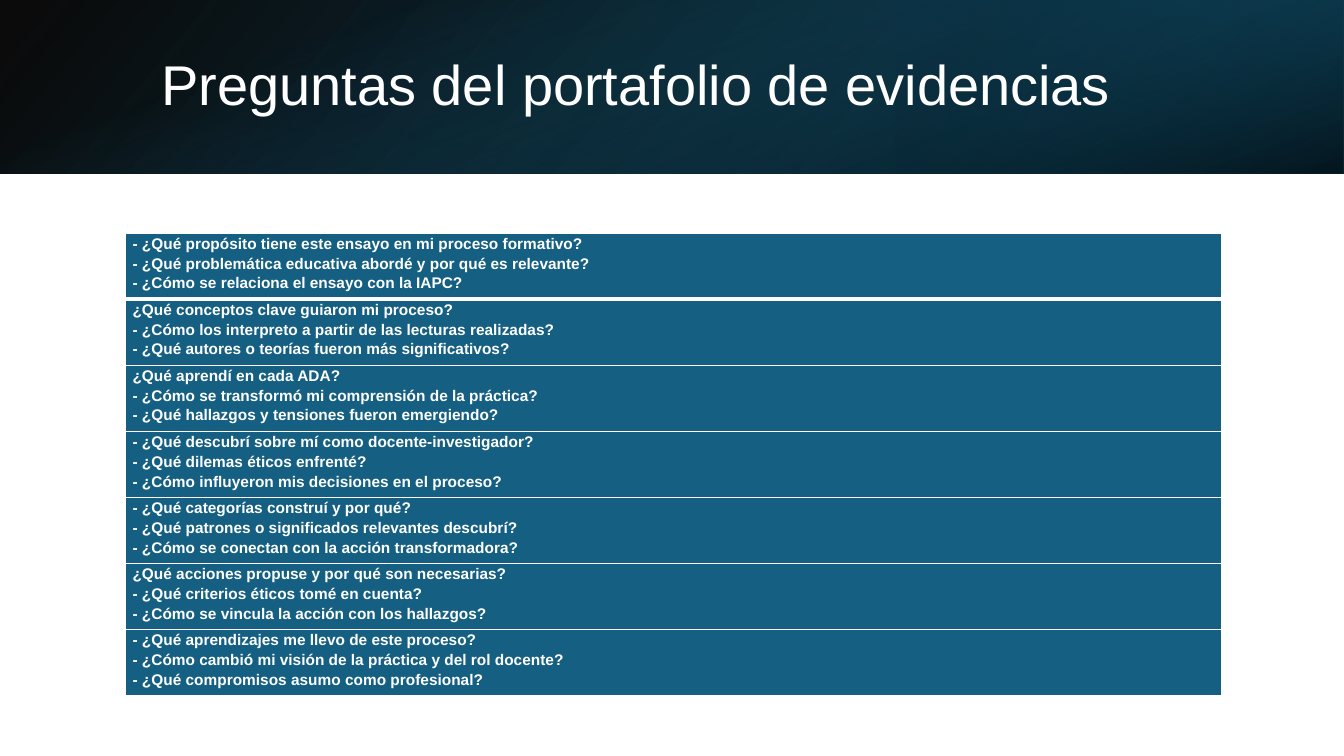
from dataclasses import dataclass

from lxml.etree import SubElement
from pptx import Presentation
from pptx.dml.color import RGBColor
from pptx.enum.shapes import MSO_SHAPE
from pptx.enum.text import MSO_ANCHOR, PP_ALIGN
from pptx.oxml import parse_xml
from pptx.oxml.ns import nsdecls, qn
from pptx.util import Cm, Pt


@dataclass(frozen=True)
class Theme:
    """Colours, font and sizes of the slide."""
    font: str = "Arial"
    white: str = "FFFFFF"
    black: str = "000000"
    blue: str = "156082"
    deep_blue: str = "104862"
    night_blue: str = "0B3041"
    title_size: int = 40
    cell_size: int = 11
    thin_line: int = 1
    thick_line: int = 3


THEME = Theme()
PAGE_WIDTH, PAGE_HEIGHT = 33.87, 19.05
BAND_HEIGHT = 4.37
TITLE = "Preguntas del portafolio de evidencias"
QUESTIONS = [
    ["- ¿Qué propósito tiene este ensayo en mi proceso formativo?",
     "- ¿Qué problemática educativa abordé y por qué es relevante?",
     "- ¿Cómo se relaciona el ensayo con la IAPC?"],
    ["¿Qué conceptos clave guiaron mi proceso?",
     "- ¿Cómo los interpreto a partir de las lecturas realizadas?",
     "- ¿Qué autores o teorías fueron más significativos?"],
    ["¿Qué aprendí en cada ADA?",
     "- ¿Cómo se transformó mi comprensión de la práctica?",
     "- ¿Qué hallazgos y tensiones fueron emergiendo?"],
    ["- ¿Qué descubrí sobre mí como docente-investigador?",
     "- ¿Qué dilemas éticos enfrenté?",
     "- ¿Cómo influyeron mis decisiones en el proceso?"],
    ["- ¿Qué categorías construí y por qué?",
     "- ¿Qué patrones o significados relevantes descubrí?",
     "- ¿Cómo se conectan con la acción transformadora?"],
    ["¿Qué acciones propuse y por qué son necesarias?",
     "- ¿Qué criterios éticos tomé en cuenta?",
     "- ¿Cómo se vincula la acción con los hallazgos?"],
    ["- ¿Qué aprendizajes me llevo de este proceso?",
     "- ¿Cómo cambió mi visión de la práctica y del rol docente?",
     "- ¿Qué compromisos asumo como profesional?"],
]


def add_span(para, text, size, bold=False):
    """Add one white run to a paragraph."""
    span = para.add_run()
    span.text = text
    span.font.name = THEME.font
    span.font.size = Pt(size)
    span.font.bold = bold
    span.font.color.rgb = RGBColor.from_string(THEME.white)


def add_gradient_band(page, place, stops, angle, rotation=0, flipped=False):
    """Add a rectangle with a clockwise gradient of (position, colour, opacity) stops."""
    band = page.shapes.add_shape(MSO_SHAPE.RECTANGLE, *map(Cm, place))
    band.shadow.inherit = False
    band.line.fill.background()
    band.rotation = rotation
    if flipped:
        band._element.spPr.find(qn("a:xfrm")).set("flipH", "1")
    band.fill.gradient()
    band.fill.gradient_angle = 360 - angle
    for stop, (position, colour, _) in zip(band.fill.gradient_stops, stops):
        stop.position = position / 100
        stop.color.rgb = RGBColor.from_string(colour)
    colours = band._element.spPr.iter(qn("a:srgbClr"))
    for colour, (_, _, opacity) in zip(list(colours), stops):
        SubElement(colour, qn("a:alpha"), val=str(opacity * 1000))


def add_title(page):
    """Fill the title placeholder and bring it in front of the bands."""
    title = page.shapes.title
    title.left, title.top = Cm(3.81), Cm(0.97)
    title.width, title.height = Cm(27.89), Cm(2.44)
    title.text_frame.vertical_anchor = MSO_ANCHOR.MIDDLE
    para = title.text_frame.paragraphs[0]
    para.alignment = PP_ALIGN.LEFT
    para.line_spacing = 0.9
    add_span(para, TITLE, THEME.title_size)
    page.shapes._spTree.append(title._element)


def set_borders(cell, top, bottom):
    """Draw white lines around a cell."""
    widths = {"L": THEME.thin_line, "R": THEME.thin_line, "T": top, "B": bottom}
    properties = cell._tc.get_or_add_tcPr()
    for index, (side, width) in enumerate(widths.items()):
        properties.insert(index, parse_xml(
            f'<a:ln{side} {nsdecls("a")} w="{Pt(width)}"><a:solidFill>'
            f'<a:srgbClr val="{THEME.white}"/></a:solidFill></a:ln{side}>'))


def fill_cell(cell, lines):
    """Write a group of questions in a blue cell."""
    cell.fill.solid()
    cell.fill.fore_color.rgb = RGBColor.from_string(THEME.blue)
    cell.margin_left, cell.margin_right = Cm(0.19), Cm(0.5)
    cell.margin_top = cell.margin_bottom = Cm(0)
    para = cell.text_frame.paragraphs[0]
    para.line_spacing = 1.15
    para.space_after = Pt(10)
    for index, line in enumerate(lines):
        if index:
            para.add_line_break()
        add_span(para, line, THEME.cell_size, bold=True)


def add_question_table(page):
    """Add the one-column table, with a thick line under its first row."""
    frame = page.shapes.add_table(len(QUESTIONS), 1, Cm(3.15), Cm(5.87), Cm(27.64), Cm(11.66))
    for index, lines in enumerate(QUESTIONS):
        cell = frame.table.cell(index, 0)
        fill_cell(cell, lines)
        set_borders(cell,
                    top=THEME.thick_line if index == 1 else THEME.thin_line,
                    bottom=THEME.thick_line if index == 0 else THEME.thin_line)


def main():
    """Build and save the slide."""
    deck = Presentation()
    deck.slide_width, deck.slide_height = Cm(PAGE_WIDTH), Cm(PAGE_HEIGHT)
    page = deck.slides.add_slide(deck.slide_layouts[5])
    add_gradient_band(page, (0, 0, PAGE_WIDTH, BAND_HEIGHT),
                      [(0, THEME.black, 96), (100, THEME.deep_blue, 100)], 140, flipped=True)
    add_gradient_band(page, (PAGE_WIDTH * 2 / 3, 0, PAGE_WIDTH / 3, BAND_HEIGHT),
                      [(19, THEME.night_blue, 68), (100, THEME.blue, 79)], 320,
                      rotation=180, flipped=True)
    offset = (PAGE_WIDTH - BAND_HEIGHT) / 2
    add_gradient_band(page, (offset, -offset, BAND_HEIGHT, PAGE_WIDTH),
                      [(23, THEME.blue, 0), (99, THEME.black, 74)], 340, rotation=90)
    add_title(page)
    add_question_table(page)
    deck.save("out.pptx")


if __name__ == "__main__":
    main()
